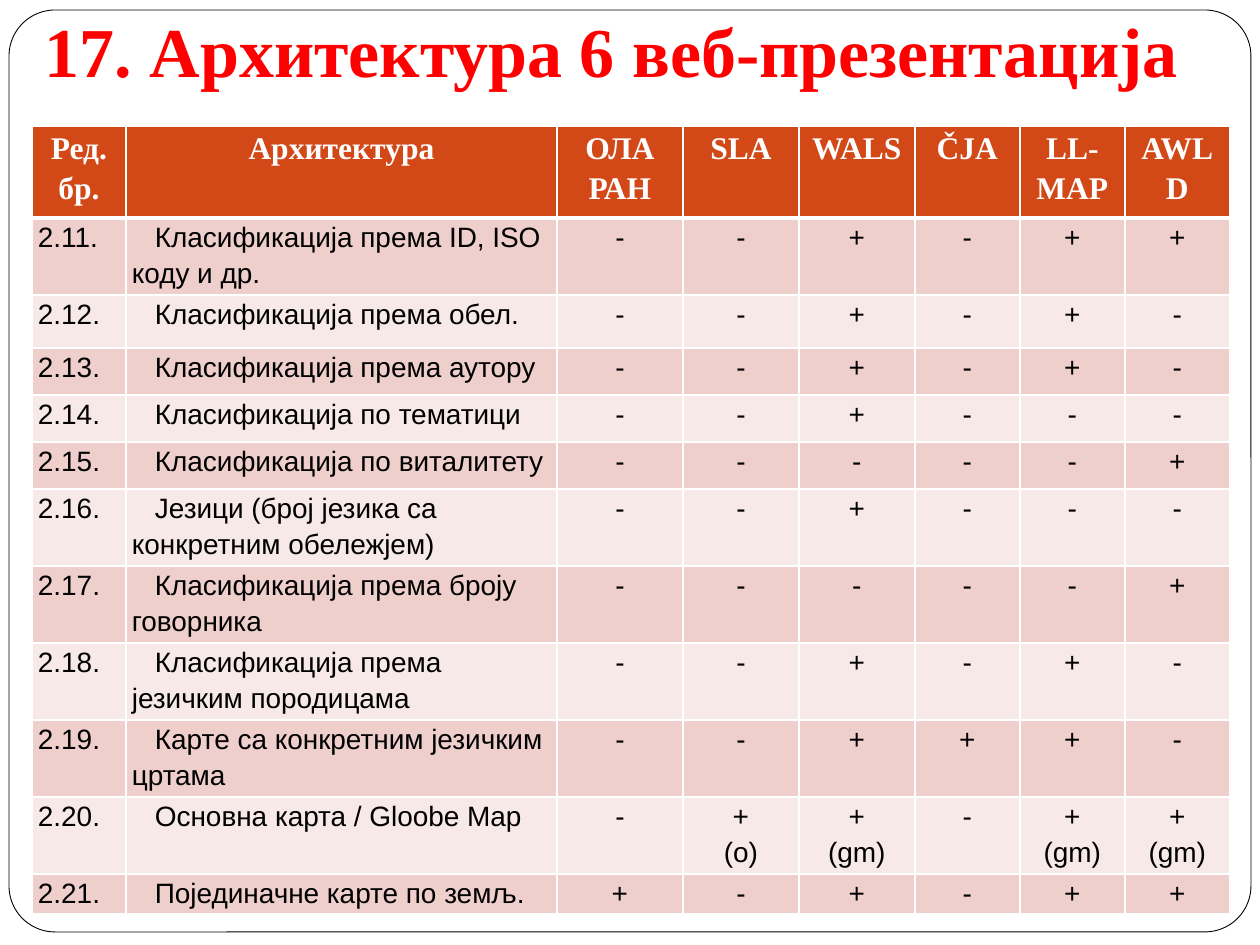
from lxml import etree
from pptx import Presentation
from pptx.dml.color import RGBColor
from pptx.enum.shapes import MSO_SHAPE
from pptx.enum.text import MSO_ANCHOR, MSO_AUTO_SIZE, PP_ALIGN
from pptx.oxml.ns import qn
from pptx.util import Pt

ROUNDED = MSO_SHAPE.ROUNDED_RECTANGLE
LEFT, CENTER = PP_ALIGN.LEFT, PP_ALIGN.CENTER
BOTTOM = MSO_ANCHOR.BOTTOM
NO_AUTOFIT = MSO_AUTO_SIZE.NONE
EMU_PER_PX = 914400 // 126

COLORS = {
    "white": "FFFFFF",
    "black": "000000",
    "title": "FF0000",
    "header": "D34817",
    "odd": "EFCFCC",
    "even": "F7E9E8",
}

COLUMN_WIDTHS = [94, 431, 126, 116, 116, 105, 105, 105]
ROW_HEIGHTS = [92, 77, 53] + [47] * 3 + [77] * 5 + [40]
HEADERS = ["Ред.\nбр.", "Архитектура", "ОЛА\nРАН", "SLA", "WALS", "ČJA", "LL-MAP", "AWLD"]
FIRST_NUMBER = 11
FEATURES = [
    ("Класификација према ID, ISO коду и др.", "--+-++"),
    ("Класификација према обел.", "--+-+-"),
    ("Класификација према аутору", "--+-+-"),
    ("Класификација по тематици", "--+---"),
    ("Класификација по виталитету", "-----+"),
    ("Језици (број језика са конкретним обележјем)", "--+---"),
    ("Класификација према броју говорника", "-----+"),
    ("Класификација према језичким породицама", "--+-+-"),
    ("Картe са конкретним језичким цртама", "--+++-"),
    ("Основна карта / Gloobe Map",
     ["-", "+\n(о)", "+\n(gm)", "-", "+\n(gm)", "+\n(gm)"]),
    ("Појединачне карте по земљ.", "+-+-++"),
]


def px(length):
    return length * EMU_PER_PX


def color(name):
    return RGBColor.from_string(COLORS[name])


def place(shape, box):
    shape.left, shape.top, shape.width, shape.height = map(px, box)


def set_font(paragraph, name, size, color_name, bold=False):
    font = paragraph.font
    font.name, font.size, font.bold = name, Pt(size), bold
    font.color.rgb = color(color_name)


def add_frame(page, box):
    frame = page.shapes.add_shape(ROUNDED, *map(px, box))
    frame.adjustments[0] = 0.05
    frame.shadow.inherit = False
    frame.fill.solid()
    frame.fill.fore_color.rgb = color("white")
    frame.line.color.rgb = color("black")
    frame.line.width = Pt(0.5)
    page.shapes._spTree.insert(2, frame._element)  # behind the title


def fill_title(page, box, text):
    title = page.shapes.title
    place(title, box)
    text_frame = title.text_frame
    text_frame.text = text
    text_frame.auto_size = NO_AUTOFIT
    text_frame.vertical_anchor = BOTTOM
    text_frame.margin_left = text_frame.margin_right = text_frame.margin_bottom = px(13)
    text_frame.margin_top = px(6)
    paragraph = text_frame.paragraphs[0]
    paragraph.alignment = LEFT
    set_font(paragraph, "Times New Roman", 40, "title", bold=True)


def add_borders(cell, top, bottom):
    """Draw white cell edges, with top and bottom widths in points."""
    properties = cell._tc.get_or_add_tcPr()
    for side, width in (("L", 1), ("R", 1), ("T", top), ("B", bottom)):
        line = etree.SubElement(properties, qn(f"a:ln{side}"), w=str(Pt(width)))
        fill = etree.SubElement(line, qn("a:solidFill"))
        etree.SubElement(fill, qn("a:srgbClr"), val=COLORS["white"])


def fill_cell(cell, text, row, column):
    is_header = row == 0
    add_borders(cell, top=3 if row == 1 else 1, bottom=3 if is_header else 1)
    cell.fill.solid()
    cell.fill.fore_color.rgb = color("header" if is_header else "odd" if row % 2 else "even")
    cell.margin_left = cell.margin_right = px(6)
    cell.margin_top = cell.margin_bottom = 0
    cell.text_frame.text = text
    for paragraph in cell.text_frame.paragraphs:
        paragraph.line_spacing = 1.15
        paragraph.alignment = CENTER if is_header or column > 1 else LEFT
        if is_header:
            set_font(paragraph, "Times New Roman", 18, "white", bold=True)
        else:
            set_font(paragraph, "Arial", 16, "black")
            if column == 1:
                paragraph._p.get_or_add_pPr().set("indent", str(px(23)))


def add_comparison_table(page, box):
    rows = [HEADERS] + [
        [f"2.{number}.", feature, *marks]
        for number, (feature, marks) in enumerate(FEATURES, FIRST_NUMBER)
    ]
    table = page.shapes.add_table(len(rows), len(HEADERS), *map(px, box)).table
    for column, width in zip(table.columns, COLUMN_WIDTHS):
        column.width = px(width)
    for row, height in zip(table.rows, ROW_HEIGHTS):
        row.height = px(height)
    for row, texts in enumerate(rows):
        for column, text in enumerate(texts):
            fill_cell(table.cell(row, column), text, row, column)


def main():
    deck = Presentation()
    deck.slide_width, deck.slide_height = px(1260), px(945)
    page = deck.slides.add_slide(deck.slide_layouts[5])
    add_frame(page, (9, 10, 1242, 922))
    fill_title(page, (32, 0, 1187, 105), "17. Архитектура 6 веб-презентација")
    add_comparison_table(page, (32, 126, sum(COLUMN_WIDTHS), sum(ROW_HEIGHTS)))
    deck.save("out.pptx")


if __name__ == "__main__":
    main()
